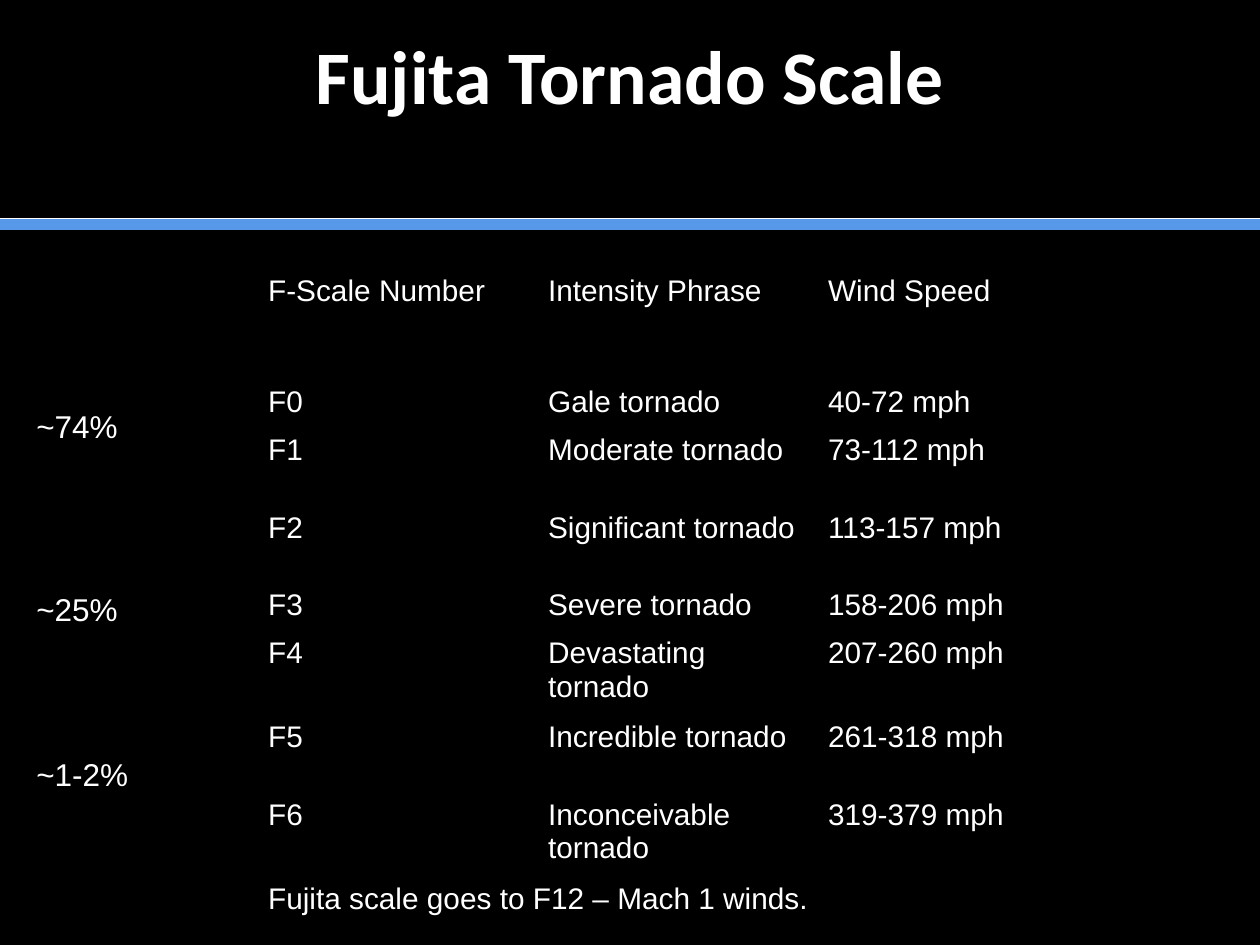
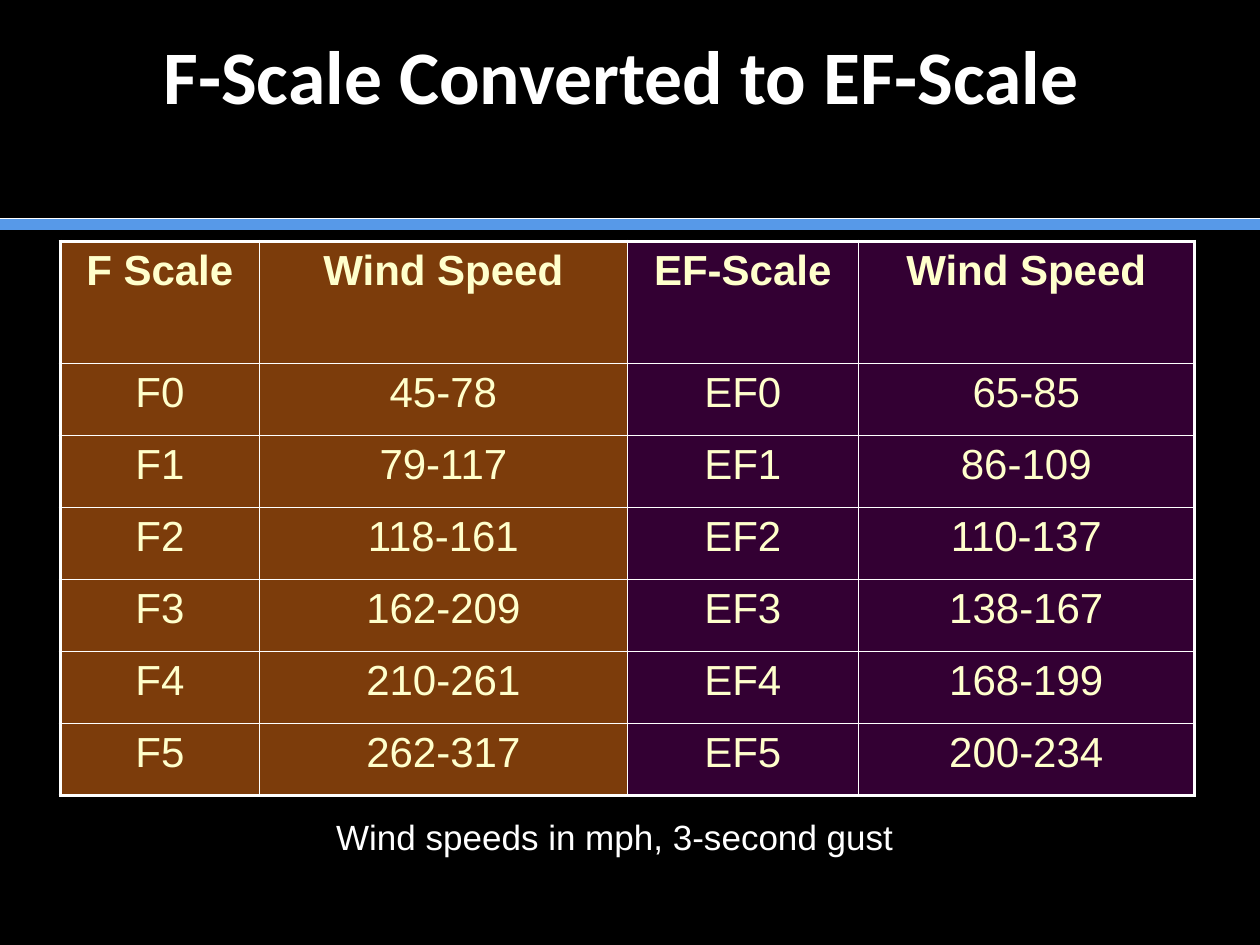
"""Build two slides on the Fujita and Enhanced Fujita tornado scales."""
from dataclasses import dataclass

from lxml.etree import SubElement
from pptx import Presentation
from pptx.dml.color import RGBColor
from pptx.enum.shapes import MSO_CONNECTOR
from pptx.enum.text import PP_ALIGN
from pptx.oxml.ns import qn
from pptx.util import Pt


@dataclass(frozen=True)
class Theme:
    back: RGBColor = RGBColor.from_string("000000")
    ink: RGBColor = RGBColor.from_string("FFFFFF")
    band: RGBColor = RGBColor.from_string("5799E8")
    cream: RGBColor = RGBColor.from_string("FFFFCC")
    rust: RGBColor = RGBColor.from_string("F97817")
    plum: RGBColor = RGBColor.from_string("660066")
    head: str = "Calibri"
    body: str = "Arial"
    title: float = 43.2
    cell: float = 24
    note: float = 20
    share: float = 18
    list: float = 17
    plain: str = "{2D5ABB26-0587-4C30-8999-92F81FD0307C}"


theme = Theme()


def write(frame, words, size, face=theme.body, ink=theme.ink, bold=False, align=PP_ALIGN.LEFT):
    frame.word_wrap = True
    para = frame.paragraphs[0]
    para.text = words
    para.alignment = align
    font = para.font
    font.name, font.size, font.bold = face, Pt(size), bold
    font.color.rgb = ink


def grid(slide, left, top, cols, rows):
    frame = slide.shapes.add_table(
        len(rows), len(cols), Pt(left), Pt(top), Pt(sum(cols)), Pt(sum(rows)))
    table = frame.table
    table.first_row = table.horz_banding = False
    table._tbl.tblPr.find(qn("a:tableStyleId")).text = theme.plain
    for col, width in zip(table.columns, cols):
        col.width = Pt(width)
    for row, height in zip(table.rows, rows):
        row.height = Pt(height)
    return table


deck = Presentation()
deck.slide_width, deck.slide_height = Pt(720), Pt(540)
slides = []
for title in ("Fujita Tornado Scale", "F-Scale Converted to EF-Scale "):
    slide = deck.slides.add_slide(deck.slide_layouts[6])
    slide.background.fill.solid()
    slide.background.fill.fore_color.rgb = theme.back
    for y, color, width in ((128.2, theme.band, 7), (124.6, theme.ink, 0.5)):
        line = slide.shapes.add_connector(MSO_CONNECTOR.STRAIGHT, 0, Pt(y), Pt(720), Pt(y))
        line.line.color.rgb = color
        line.line.width = Pt(width)
        SubElement(line._element.spPr, qn("a:effectLst"))
    box = slide.shapes.add_textbox(Pt(36), Pt(16.6), Pt(648), Pt(95)).text_frame
    box.margin_top = box.margin_bottom = 0
    write(box, title, theme.title, theme.head, bold=True, align=PP_ALIGN.CENTER)
    slides.append(slide)
first, second = slides

scale = (
    ("F-Scale Number", "Intensity Phrase", "Wind Speed"),
    ("F0", "Gale tornado", "40-72 mph"),
    ("F1", "Moderate tornado", "73-112 mph"),
    ("F2", "Significant tornado", "113-157 mph"),
    ("F3", "Severe tornado", "158-206 mph"),
    ("F4", "Devastating tornado", "207-260 mph"),
    ("F5", "Incredible tornado", "261-318 mph"),
    ("F6", "Inconceivable tornado", "319-379 mph"),
    ("Fujita scale goes to F12 – Mach 1 winds.",),
)
table = grid(first, 146, 153.4, [160] * 3, (63.2, 27.4, 44.2, 44.2, 27.4, 47.7, 44.2, 47.7, 27.4))
table.cell(8, 0).merge(table.cell(8, 2))
for r, row in enumerate(scale):
    for c, words in enumerate(row):
        write(table.cell(r, c).text_frame, words, theme.list)

for words, top in (("~74%", 229), ("~25%", 333.4), ("~1-2%", 427.7)):
    box = first.shapes.add_textbox(Pt(13.7), Pt(top), Pt(103), Pt(29))
    write(box.text_frame, words, theme.share)

speeds = (
    ("F Scale", "Wind Speed", "EF-Scale", "Wind Speed"),
    ("F0", "45-78", "EF0", "65-85"),
    ("F1", "79-117", "EF1", "86-109"),
    ("F2", "118-161", "EF2", "110-137"),
    ("F3", "162-209", "EF3", "138-167"),
    ("F4", "210-261", "EF4", "168-199"),
    ("F5", "262-317", "EF5", "200-234"),
)
table = grid(second, 34.5, 138, (113.7, 210.3, 132, 192), [69.6] + [41.2] * 6)
for r, row in enumerate(speeds):
    for c, words in enumerate(row):
        cell = table.cell(r, c)
        write(cell.text_frame, words, theme.cell, ink=theme.cream, bold=r == 0,
              align=PP_ALIGN.CENTER)
        cell.fill.solid()
        cell.fill.fore_color.rgb = theme.rust if c < 2 else theme.plum
        props = cell._tc.tcPr
        tint = props.find(qn("a:solidFill")).find(qn("a:srgbClr"))
        SubElement(tint, qn("a:alpha"), val="50000")
        edges = (("L", c == 0), ("R", c == 3), ("T", r == 0), ("B", r == 6))
        for spot, (side, outer) in enumerate(edges):
            edge = SubElement(props, qn(f"a:ln{side}"), w=str(Pt(2.25 if outer else 1)))
            SubElement(SubElement(edge, qn("a:solidFill")), qn("a:srgbClr"), val=str(theme.ink))
            props.insert(spot, edge)

box = second.shapes.add_textbox(Pt(185), Pt(462.2), Pt(363), Pt(31))
write(box.text_frame, "Wind speeds in mph, 3-second gust", theme.note)

deck.save("out.pptx")
